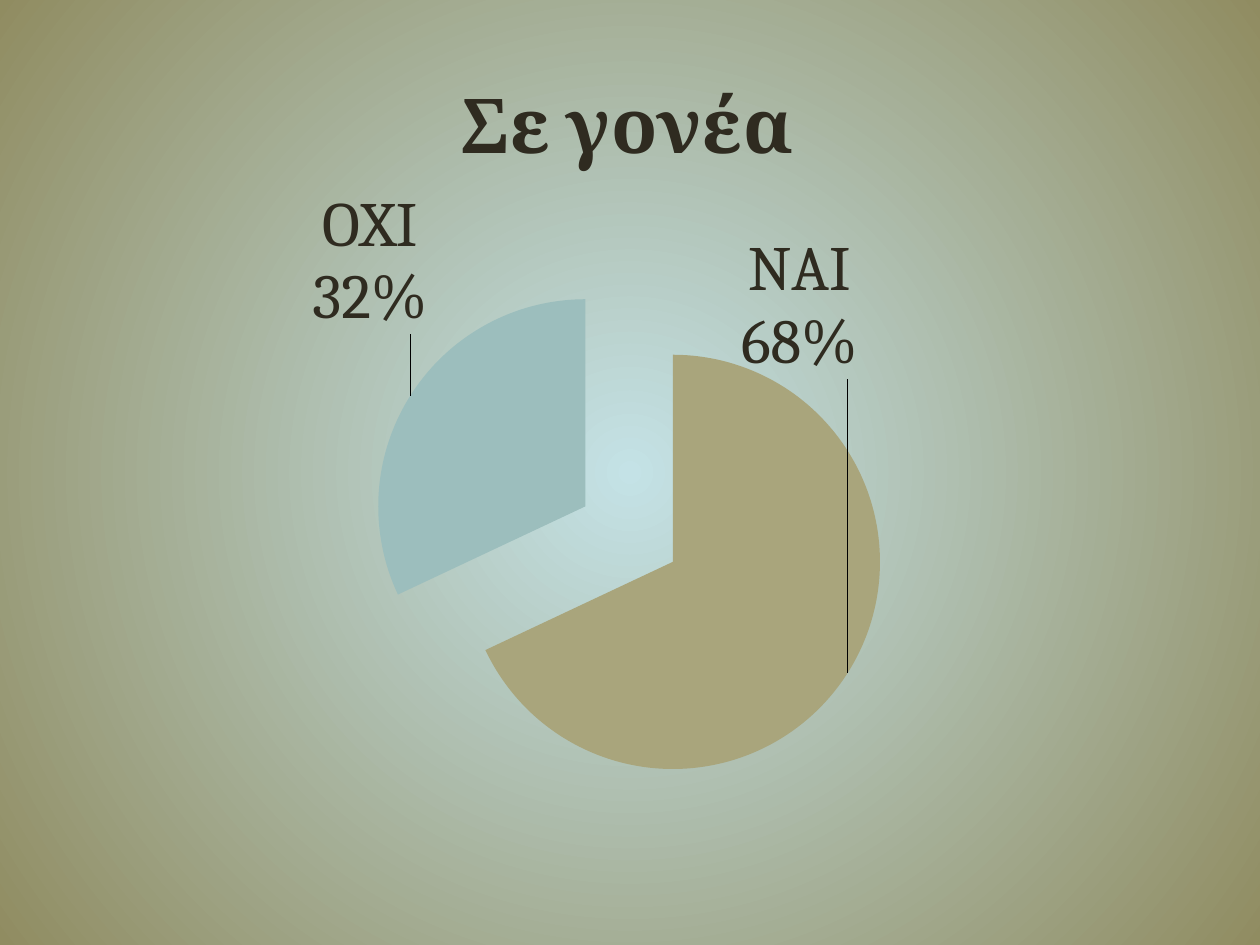
from lxml import etree
from pptx import Presentation
from pptx.chart.data import CategoryChartData
from pptx.dml.color import RGBColor
from pptx.enum.chart import XL_CHART_TYPE, XL_LABEL_POSITION
from pptx.oxml.ns import qn
from pptx.util import Pt

PIE = XL_CHART_TYPE.PIE
OUTSIDE_END = XL_LABEL_POSITION.OUTSIDE_END
PX = 914400 // 126
INK = "2F2B20"
SLICES = [
    ("NAI", 68, "A9A57C", (-113, -442)),
    ("OXI", 32, "9CBEBD", (23, -57)),
]


def px(value):
    return value * PX


def color(value):
    return RGBColor.from_string(value)


def set_font(font, name, size, bold=False):
    font.name = name
    font.size = Pt(size)
    font.bold = bold
    font.color.rgb = color(INK)


def make_layout(**values):
    layout = etree.Element(qn("c:layout"))
    manual = etree.SubElement(layout, qn("c:manualLayout"))
    for tag, value in values.items():
        etree.SubElement(manual, qn(f"c:{tag}")).set("val", str(value))
    return layout


def replace_layout(parent, layout, index):
    for old in parent.findall(qn("c:layout")):
        parent.remove(old)
    parent.insert(index, layout)


def paint_background(slide):
    fill = slide.background.fill
    fill.gradient()
    for stop, position, value in zip(fill.gradient_stops, (0, 1), ("C4E2E6", "908C61")):
        stop.position = position
        stop.color.rgb = color(value)
    gradient = slide.background._cSld.find(".//" + qn("a:gradFill"))
    gradient.remove(gradient.find(qn("a:lin")))
    circle = etree.SubElement(gradient, qn("a:path"), path="circle")
    etree.SubElement(circle, qn("a:fillToRect"), l="50000", t="50000", r="50000", b="50000")


def add_title(chart, text, width, height):
    title = chart.chart_title
    paragraph = title.text_frame.paragraphs[0]
    paragraph.text = text
    set_font(paragraph.font, "Cambria", 43.2, True)
    title.include_in_layout = False
    layout = make_layout(xMode="edge", yMode="edge",
                         x=round(459 / width, 3), y=round(6 / height, 3))
    replace_layout(title._element, layout, 1)


def format_labels(series, width, height):
    labels = series.data_labels
    labels.show_percentage = labels.show_category_name = True
    labels.show_value = False
    labels.position = OUTSIDE_END
    set_font(labels.font, "Cambria", 36)
    for index, (_, _, fill, (dx, dy)) in enumerate(SLICES):
        point = series.points[index]
        point.format.fill.solid()
        point.format.fill.fore_color.rgb = color(fill)
        point.data_label.position = OUTSIDE_END
        set_font(point.data_label.font, "Cambria", 36)
        label = labels._element.findall(qn("c:dLbl"))[index]
        for tag, value in (("showVal", "0"), ("showCatName", "1"), ("showPercent", "1")):
            label.find(qn(f"c:{tag}")).set("val", value)
        etree.SubElement(label, qn("c:separator")).text = "\n"
        layout = make_layout(x=round(dx / width, 3), y=round(dy / height, 3))
        replace_layout(label, layout, 1)


def add_pie(slide, left, top, width, height):
    data = CategoryChartData()
    data.categories = [name for name, *_ in SLICES]
    data.add_series("Series 1", [value for _, value, *_ in SLICES])
    frame = slide.shapes.add_chart(PIE, px(left), px(top), px(width), px(height), data)
    chart = frame.chart
    chart.has_legend = False
    set_font(chart.font, "Roboto", 36)
    add_title(chart, "Σε γονέα", width, height)
    plot = chart.plots[0]
    plot.vary_by_categories = True
    series = plot.series[0]
    format_labels(series, width, height)
    explosion = etree.Element(qn("c:explosion"), val="25")
    series._element.find(qn("c:dPt")).addprevious(explosion)
    for point in series._element.findall(qn("c:dPt")):
        point.find(qn("c:spPr")).addprevious(etree.Element(qn("c:explosion"), val="25"))
    area = chart._chartSpace.find(".//" + qn("c:plotArea"))
    layout = make_layout(layoutTarget="inner", xMode="edge", yMode="edge",
                         x=round(381 / width, 3), y=round(218 / height, 3),
                         w=round(518 / width, 3), h=round(518 / height, 3))
    replace_layout(area, layout, 0)


def main():
    presentation = Presentation()
    presentation.slide_width = px(1260)
    presentation.slide_height = px(945)
    slide = presentation.slides.add_slide(presentation.slide_layouts[6])
    paint_background(slide)
    add_pie(slide, -11, 57, 1283, 830)
    presentation.save("out.pptx")


if __name__ == "__main__":
    main()
